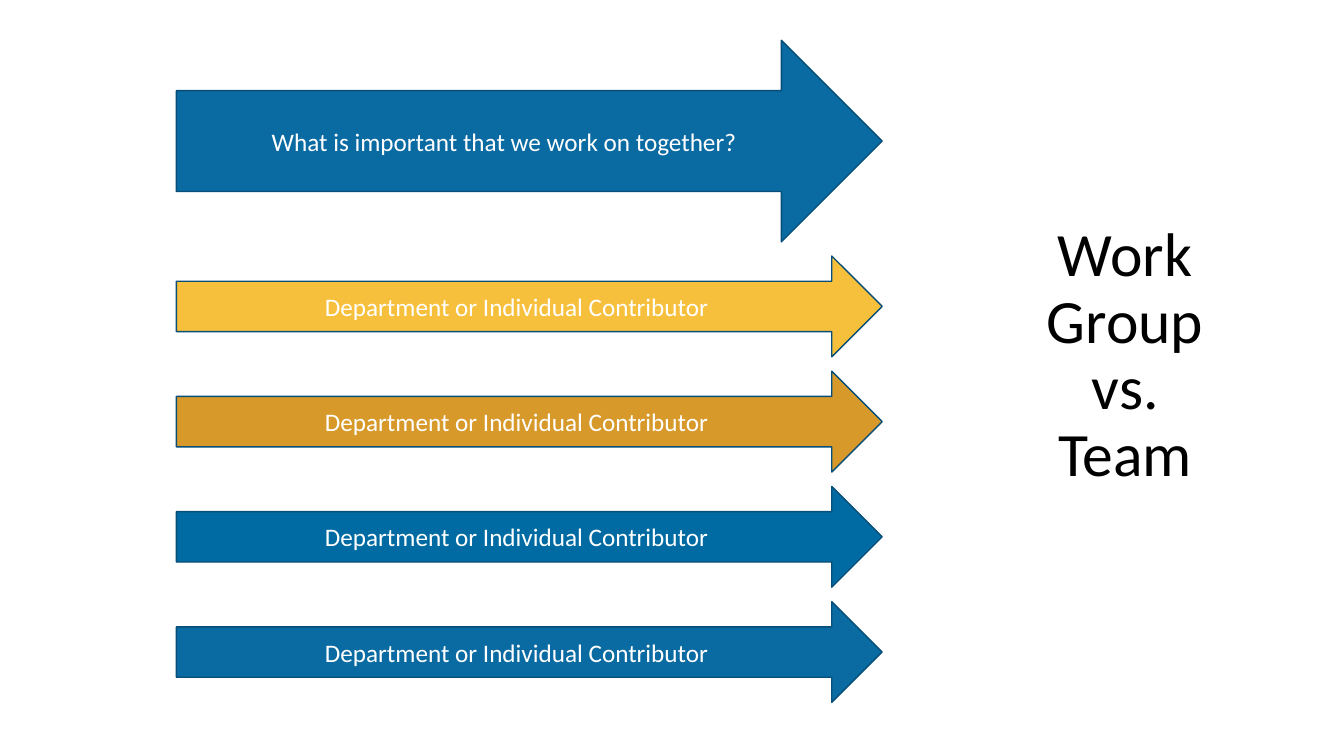
from dataclasses import dataclass

from pptx import Presentation
from pptx.dml.color import RGBColor
from pptx.enum import shapes, text
from pptx.util import Inches, Pt

BLACK = RGBColor(0x00, 0x00, 0x00)
WHITE = RGBColor(0xFF, 0xFF, 0xFF)
YELLOW = RGBColor(0xF7, 0xC0, 0x3C)
OCHRE = RGBColor(0xD7, 0x99, 0x2A)
BLUE = RGBColor(0x00, 0x6A, 0xA2)
SOFT_BLUE = RGBColor(0x0A, 0x6A, 0xA2)
OUTLINE = RGBColor(0x07, 0x4E, 0x78)

FONT = "Calibri"
ARROW_LEFT, ARROW_WIDTH = 1.75, 7
FIRST_DEPARTMENT_TOP, DEPARTMENT_STEP = 2.54, 1.143
DEPARTMENT = "Department or Individual Contributor"


@dataclass
class Arrow:
    label: str
    top: float
    height: float
    fill: RGBColor


def write(shape, wording: str, *, size: float, color: RGBColor,
          line_spacing: float = 1.0) -> None:
    """Put centred text into a shape."""
    frame = shape.text_frame
    frame.word_wrap = True
    frame.vertical_anchor = text.MSO_ANCHOR.MIDDLE
    paragraph = frame.paragraphs[0]
    paragraph.alignment = text.PP_ALIGN.CENTER
    paragraph.line_spacing = line_spacing
    run = paragraph.add_run()
    run.text = wording
    run.font.name = FONT
    run.font.size = Pt(size)
    run.font.color.rgb = color


def draw_arrow(slide, arrow: Arrow) -> None:
    body = slide.shapes.add_shape(
        shapes.MSO_SHAPE.RIGHT_ARROW, Inches(ARROW_LEFT), Inches(arrow.top),
        Inches(ARROW_WIDTH), Inches(arrow.height))
    body.shadow.inherit = False
    body.fill.solid()
    body.fill.fore_color.rgb = arrow.fill
    body.line.color.rgb = OUTLINE
    body.line.width = Pt(1)
    write(body, arrow.label, size=18, color=WHITE)


def main() -> None:
    deck = Presentation()
    deck.slide_width, deck.slide_height = Inches(13.33), Inches(7.5)
    slide = deck.slides.add_slide(deck.slide_layouts[6])

    # Title on the right
    title = slide.shapes.add_textbox(
        Inches(10.11), Inches(1.96), Inches(2.1), Inches(3.16))
    write(title, "Work Group vs. Team", size=44, color=BLACK, line_spacing=0.9)

    # Department arrows, evenly stacked, then the shared team arrow
    arrows = [
        Arrow(DEPARTMENT, FIRST_DEPARTMENT_TOP + row * DEPARTMENT_STEP, 1, fill)
        for row, fill in enumerate((YELLOW, OCHRE, BLUE, SOFT_BLUE))
    ]
    arrows.append(
        Arrow("What is important that we work on together?", 0.4, 2, SOFT_BLUE))
    for arrow in arrows:
        draw_arrow(slide, arrow)

    deck.save("out.pptx")


if __name__ == "__main__":
    main()
